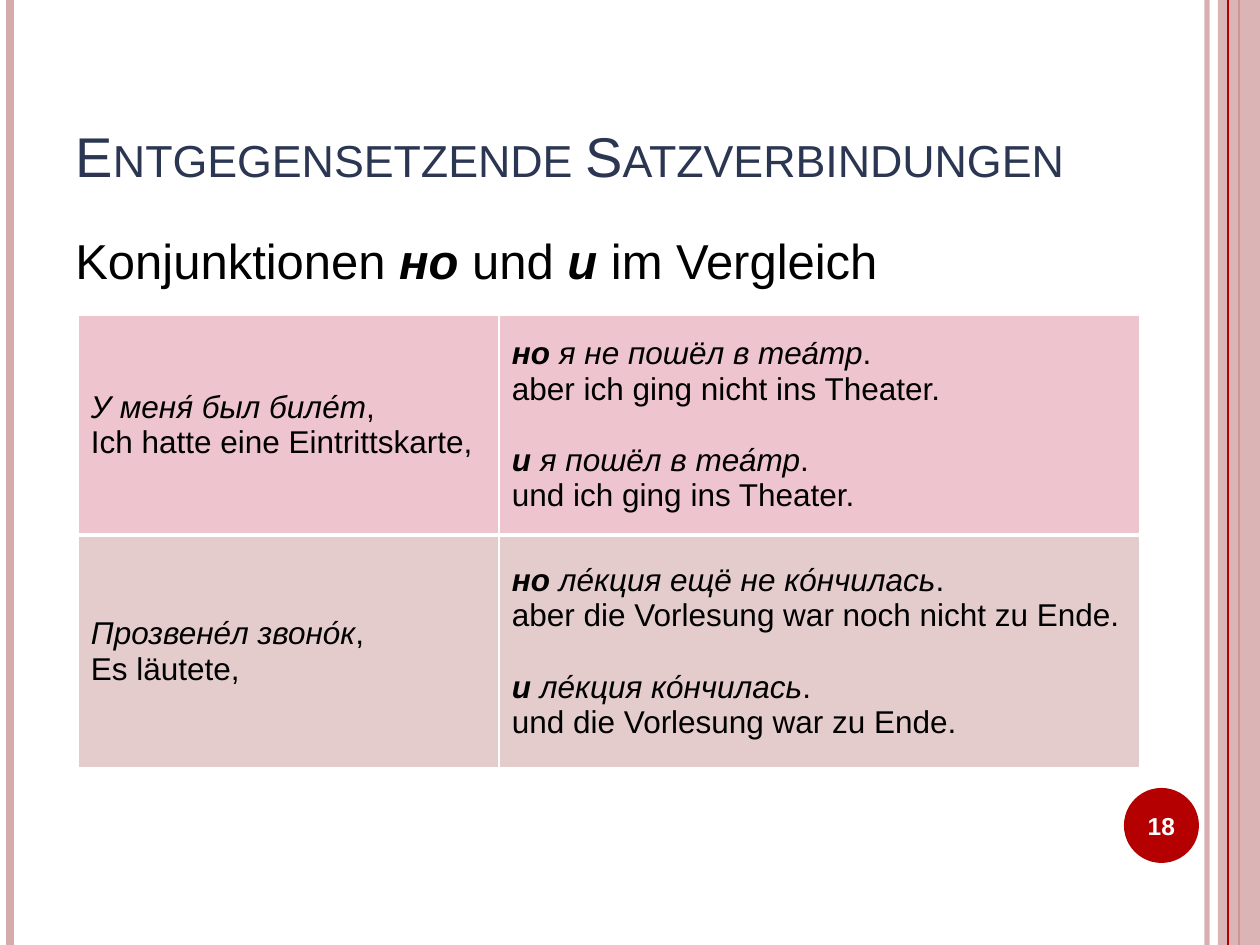
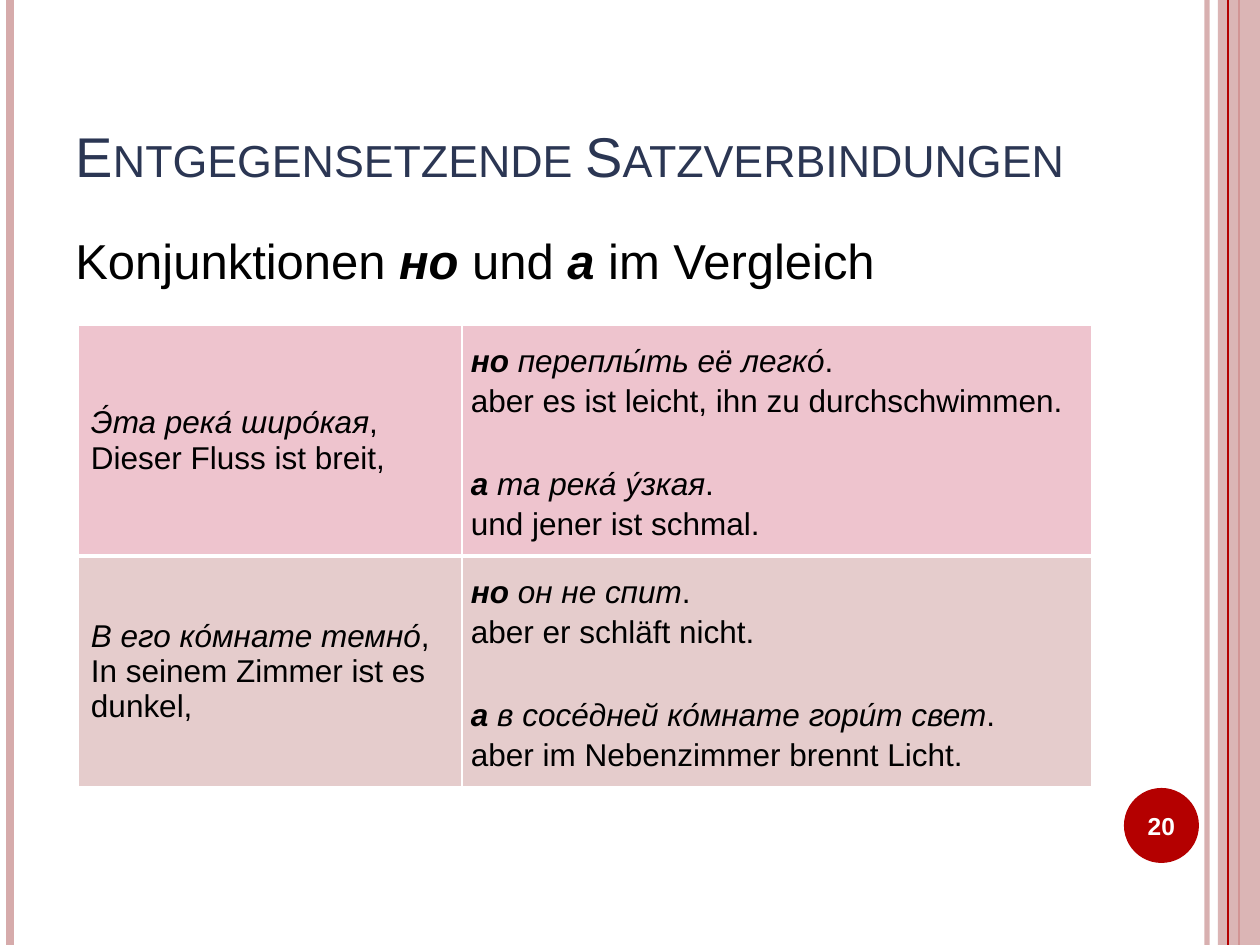
from lxml.etree import SubElement
from pptx import Presentation
from pptx.dml.color import RGBColor
from pptx.enum.shapes import MSO_CONNECTOR, MSO_SHAPE
from pptx.enum.text import MSO_ANCHOR, MSO_AUTO_SIZE, PP_ALIGN
from pptx.oxml.ns import qn
from pptx.util import Emu, Pt

PX_PER_INCH = 126
WIDTH, HEIGHT = 1260, 945
FONT = "Arial"
NAVY = RGBColor(0x2B, 0x36, 0x53)
BLACK = RGBColor(0, 0, 0)
WHITE = RGBColor(0xFF, 0xFF, 0xFF)
RED = RGBColor(0xB4, 0, 0)
DUSTY_ROSE = RGBColor(0xD6, 0xAB, 0xAB)
ROW_FILLS = [RGBColor(0xEE, 0xC4, 0xCE), RGBColor(0xE5, 0xCC, 0xCC)]

TITLE = "Entgegensetzende Satzverbindungen"
SLIDES = [
    {
        "number": "18",
        "conjunctions": ("но", "и"),
        "top": 315, "columns": [421, 641], "rows": [220, 233],
        "margins": (13, 6), "spacing": 1.0,
        "examples": [
            (("У меня́ был биле́т", "Ich hatte eine Eintrittskarte,"),
             [("я не пошëл в теа́тр", "aber ich ging nicht ins Theater."),
              ("я пошëл в теа́тр", "und ich ging ins Theater.")]),
            (("Прозвене́л звоно́к", "Es läutete,"),
             [("ле́кция ещë не ко́нчилась", "aber die Vorlesung war noch nicht zu Ende."),
              ("ле́кция ко́нчилась", "und die Vorlesung war zu Ende.")]),
        ],
    },
    {
        "number": "20",
        "conjunctions": ("но", "а"),
        "top": 325, "columns": [384, 630], "rows": [231, 231],
        "margins": (9, 0), "spacing": 1.15,
        "examples": [
            (("Э́та река́ широ́кая", "Dieser Fluss ist breit,"),
             [("переплы́ть еë легко́", "aber es ist leicht, ihn zu durchschwimmen."),
              ("та река́ у́зкая", "und jener ist schmal.")]),
            (("В его ко́мнате темно́", "In seinem Zimmer ist es dunkel,"),
             [("он не спит", "aber er schläft nicht."),
              ("в сосе́дней ко́мнате гори́т свет", "aber im Nebenzimmer brennt Licht.")]),
        ],
    },
]


def px(length):
    return Emu(round(length * 914400 / PX_PER_INCH))


def add_span(para, text, size=18, color=BLACK, bold=False, italic=False, small_caps=False):
    span = para.add_run()
    span.text = text
    font = span.font
    font.name, font.size, font.color.rgb = FONT, Pt(size), color
    font.bold, font.italic = bold, italic
    if small_caps:
        font._element.set("cap", "small")


def set_opacity(shape, percent):
    for color in shape._element.spPr.iter(qn("a:srgbClr")):
        SubElement(color, qn("a:alpha"), val=str(percent * 1000))


def add_rule(page, x, color, width):
    rule = page.shapes.add_connector(MSO_CONNECTOR.STRAIGHT, px(x), 0, px(x), px(HEIGHT))
    rule.line.color.rgb = color
    rule.line.width = Pt(width)
    SubElement(rule._element.spPr, qn("a:effectLst"))
    return rule


def add_shape(page, kind, color, left, top, width, height):
    shape = page.shapes.add_shape(kind, px(left), px(top), px(width), px(height))
    shape.shadow.inherit = False
    shape.fill.solid()
    shape.fill.fore_color.rgb = color
    shape.line.fill.background()
    return shape


def add_frame(page, number):
    set_opacity(add_rule(page, 1207, DUSTY_ROSE, 3), 93)
    add_rule(page, 10, DUSTY_ROSE, 4.5)
    add_rule(page, 1239, RED, 1.5)
    set_opacity(add_shape(page, MSO_SHAPE.RECTANGLE, DUSTY_ROSE, 1218, 0, 42, HEIGHT), 87)
    add_rule(page, 1228, RED, 0.75)
    badge = add_shape(page, MSO_SHAPE.OVAL, RED, 1124, 788, 75, 75)
    frame = badge.text_frame
    frame.word_wrap = False
    frame.vertical_anchor = MSO_ANCHOR.MIDDLE
    frame.margin_left = frame.margin_right = frame.margin_top = frame.margin_bottom = 0
    para = frame.paragraphs[0]
    para.alignment = PP_ALIGN.CENTER
    add_span(para, number, size=14, color=WHITE, bold=True)


def add_heading(page, conjunctions):
    title = page.shapes.title
    title.left, title.top, title.width, title.height = px(63), px(38), px(1029), px(157)
    frame = title.text_frame
    frame.auto_size = MSO_AUTO_SIZE.NONE
    frame.vertical_anchor = MSO_ANCHOR.BOTTOM
    para = frame.paragraphs[0]
    para.alignment = PP_ALIGN.LEFT
    add_span(para, TITLE, size=32, color=NAVY, small_caps=True)

    box = page.shapes.add_textbox(px(63), px(224), px(1029), px(668))
    box.text_frame.word_wrap = True
    para = box.text_frame.paragraphs[0]
    first, second = conjunctions
    for text, strong in [("Konjunktionen ", False), (first, True), (" und ", False),
                         (second + " ", True), ("im Vergleich", False)]:
        add_span(para, text, size=28, bold=strong, italic=strong)


def set_borders(cell, bottom):
    properties = cell._tc.get_or_add_tcPr()
    for index, (side, width) in enumerate([("L", 1), ("R", 1), ("T", 1), ("B", bottom)]):
        line = SubElement(properties, qn(f"a:ln{side}"), w=str(Pt(width)))
        fill = SubElement(line, qn("a:solidFill"))
        SubElement(fill, qn("a:srgbClr"), val=str(WHITE))
        properties.insert(index, line)


def fill_cell(cell, sentences, color, bottom, margins=(13, 6), spacing=1.0):
    cell.fill.solid()
    cell.fill.fore_color.rgb = color
    set_borders(cell, bottom)
    cell.vertical_anchor = MSO_ANCHOR.MIDDLE
    cell.margin_left = cell.margin_right = px(margins[0])
    cell.margin_top = cell.margin_bottom = px(margins[1])
    frame = cell.text_frame
    for index, (conjunction, russian, german) in enumerate(sentences):
        para = frame.add_paragraph() if index else frame.paragraphs[0]
        para.line_spacing = spacing
        if index:
            para.space_before = Pt(round(20.7 * spacing, 1))
        if conjunction:
            add_span(para, conjunction, bold=True, italic=True)
            russian = " " + russian
        add_span(para, russian, italic=True)
        add_span(para, "." if conjunction else ",")
        para = frame.add_paragraph()
        para.line_spacing = spacing
        add_span(para, german)


def add_examples(page, content):
    columns, rows = content["columns"], content["rows"]
    table = page.shapes.add_table(len(rows), len(columns), px(78), px(content["top"]),
                                  px(sum(columns)), px(sum(rows))).table
    table.first_row = table.horz_banding = False
    for column, width in zip(table.columns, columns):
        column.width = px(width)
    for index, (opening, endings) in enumerate(content["examples"]):
        table.rows[index].height = px(rows[index])
        color = ROW_FILLS[index]
        bottom = 1 if index else 3
        fill_cell(table.cell(index, 0), [("", *opening)], color, bottom)
        sentences = [(word, *ending) for word, ending in zip(content["conjunctions"], endings)]
        fill_cell(table.cell(index, 1), sentences, color, bottom,
                  margins=content["margins"], spacing=content["spacing"])
        if index:
            for cell in table.rows[index].cells:
                cell._tc.tcPr.find(qn("a:lnT")).set("w", str(Pt(3)))


def main():
    deck = Presentation()
    deck.slide_width, deck.slide_height = px(WIDTH), px(HEIGHT)
    for content in SLIDES:
        page = deck.slides.add_slide(deck.slide_layouts[5])
        add_frame(page, content["number"])
        add_heading(page, content["conjunctions"])
        add_examples(page, content)
    deck.save("out.pptx")


if __name__ == "__main__":
    main()
